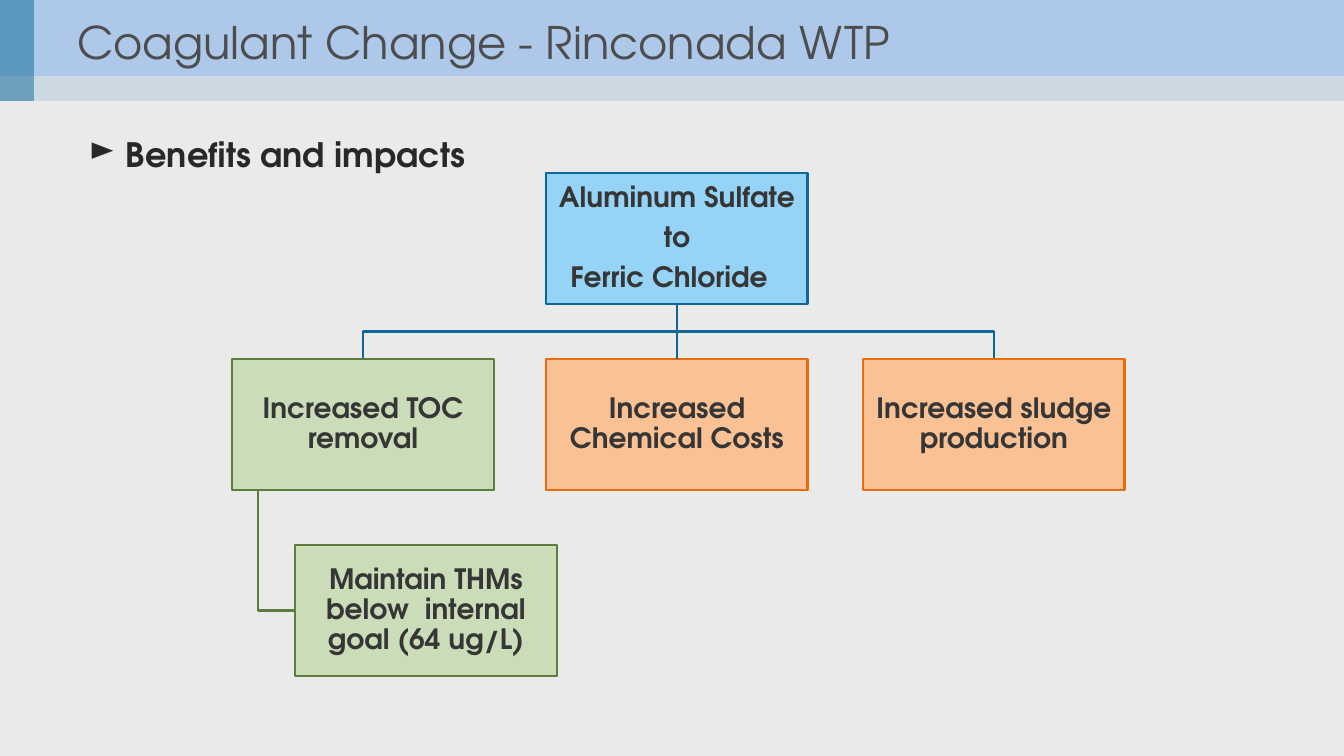
import pptx
import pptx.util
import pptx.dml.color
import pptx.enum.shapes
import pptx.enum.text
import pptx.oxml
import pptx.oxml.ns

SHAPE = pptx.enum.shapes.MSO_SHAPE
ALIGN = pptx.enum.text.PP_ALIGN
ANCHOR = pptx.enum.text.MSO_ANCHOR
Pt = pptx.util.Pt

COLORS = {
    "page": "EAEAEA", "band": "ADC8E9", "strip": "CCD9E2",
    "title": "4D4D4D", "bullet": "282828", "label": "363636",
    "blue": "95D4F6", "blue line": "0D6898",
    "green": "CADDB8", "green line": "5C7D3D",
    "orange": "FAC194", "orange line": "E96B0A",
}
FONT = "TeX Gyre Adventor"
SCALE = 914400 / 100.8
WIDTH, HEIGHT = 1344, 756

TITLE = "Coagulant Change - Rinconada WTP"
HEADING = "Benefits and impacts"
BANDS = [
    ((0, 76, WIDTH, 25), "strip", 100),
    ((0, 0, WIDTH, 76), "band", 100),
    ((0, 0, 34, 101), "blue line", 50),
]
BOX_WIDTH, BOX_HEIGHT = 262, 131
TOP, ROW_STEP = 173, 186
BOXES = {
    "change": (546, 0, "blue", ["Aluminum Sulfate", "to", "Ferric Chloride  "]),
    "toc": (232, 1, "green", ["Increased TOC removal"]),
    "thm": (295, 2, "green", ["Maintain THMs below  internal goal (64 ug/L)"]),
    "costs": (546, 1, "orange", ["Increased Chemical Costs"]),
    "sludge": (863, 1, "orange", ["Increased sludge production"]),
}
THM_DROP = 26


def px(length):
    return round(length * SCALE)


def rgb(name):
    return pptx.dml.color.RGBColor.from_string(COLORS[name])


def apply(target, **values):
    for name, value in values.items():
        setattr(target, name, value)


def style(span, size, color, bold):
    apply(span.font, name=FONT, size=Pt(size), bold=bold)
    span.font.color.rgb = rgb(color)


def outline(shape, color):
    shape.line.color.rgb = rgb(color)
    shape.line.width = Pt(2)


def add_rect(page, place, color):
    box = page.shapes.add_shape(SHAPE.RECTANGLE, *map(px, place))
    box.shadow.inherit = False
    box.fill.solid()
    box.fill.fore_color.rgb = rgb(color)
    return box


def add_bands(page):
    for place, color, opacity in BANDS:
        band = add_rect(page, place, color)
        band.line.fill.background()
        if opacity < 100:
            tint = band.element.spPr.find(".//" + pptx.oxml.ns.qn("a:srgbClr"))
            tint.append(pptx.oxml.parse_xml(
                f'<a:alpha {pptx.oxml.ns.nsdecls("a")} val="{opacity * 1000}"/>'))


def add_title(page):
    title = page.shapes.title
    title.element.getparent().append(title.element)
    apply(title, left=px(67), top=0, width=px(WIDTH - 67), height=px(84))
    apply(title.text_frame, text=TITLE, word_wrap=True, vertical_anchor=ANCHOR.MIDDLE,
          auto_size=pptx.enum.text.MSO_AUTO_SIZE.NONE)
    para = title.text_frame.paragraphs[0]
    para.alignment = ALIGN.LEFT
    style(para.runs[0], 32, "title", False)


def add_heading(page):
    box = page.shapes.add_textbox(*map(px, (79, 109, 1198, 70)))
    box.text_frame.word_wrap = True
    para = box.text_frame.paragraphs[0]
    props = para._p.get_or_add_pPr()
    props.set("marL", str(px(37)))
    props.set("indent", str(px(-37)))
    props.append(pptx.oxml.parse_xml(
        f'<a:buChar {pptx.oxml.ns.nsdecls("a")} char="►"/>'))
    para.line_spacing = 1.5
    span = para.add_run()
    span.text = HEADING
    style(span, 24, "bullet", True)


def add_elbow(page, points, color):
    (x, y), *rest = points
    builder = page.shapes.build_freeform(px(x), px(y))
    builder.add_line_segments([(px(a), px(b)) for a, b in rest], close=False)
    elbow = builder.convert_to_shape()
    elbow.shadow.inherit = False
    elbow.fill.background()
    outline(elbow, color)


def add_elbows(page):
    start = BOXES["change"][0] + BOX_WIDTH / 2
    bottom, child_top = TOP + BOX_HEIGHT, TOP + ROW_STEP
    middle = (bottom + child_top) / 2
    for name in ("sludge", "toc"):
        end = BOXES[name][0] + BOX_WIDTH / 2
        add_elbow(page, [(start, bottom), (start, middle), (end, middle),
                         (end, child_top)], "blue line")
    drop = BOXES["toc"][0] + THM_DROP
    thm_middle = TOP + 2 * ROW_STEP + BOX_HEIGHT / 2
    add_elbow(page, [(drop, child_top + BOX_HEIGHT), (drop, thm_middle),
                     (BOXES["thm"][0], thm_middle)], "green line")


def add_box(page, left, row, color, lines):
    box = add_rect(page, (left, TOP + row * ROW_STEP, BOX_WIDTH, BOX_HEIGHT), color)
    outline(box, color + " line")
    frame = box.text_frame
    apply(frame, text="\n".join(lines), word_wrap=True, vertical_anchor=ANCHOR.MIDDLE,
          margin_left=px(1), margin_right=px(1), margin_top=px(1), margin_bottom=px(1))
    for para in frame.paragraphs:
        apply(para, alignment=ALIGN.CENTER, line_spacing=0.9, space_after=Pt(7))
        style(para.runs[0], 20, "label", True)
    return box


def add_stem(page, parent, child):
    stem = page.shapes.add_connector(
        pptx.enum.shapes.MSO_CONNECTOR.STRAIGHT, 0, 0, 0, 0)
    stem.begin_connect(parent, 2)
    stem.end_connect(child, 0)
    outline(stem, "blue line")
    stem.element.spPr.append(pptx.oxml.parse_xml(
        f'<a:effectLst {pptx.oxml.ns.nsdecls("a")}/>'))


def main():
    deck = pptx.Presentation()
    apply(deck, slide_width=px(WIDTH), slide_height=px(HEIGHT))
    page = deck.slides.add_slide(deck.slide_layouts[5])
    page.background.fill.solid()
    page.background.fill.fore_color.rgb = rgb("page")
    add_bands(page)
    add_title(page)
    add_heading(page)
    add_elbows(page)
    boxes = {name: add_box(page, *content) for name, content in BOXES.items()}
    add_stem(page, boxes["change"], boxes["costs"])
    deck.save("out.pptx")


if __name__ == "__main__":
    main()
